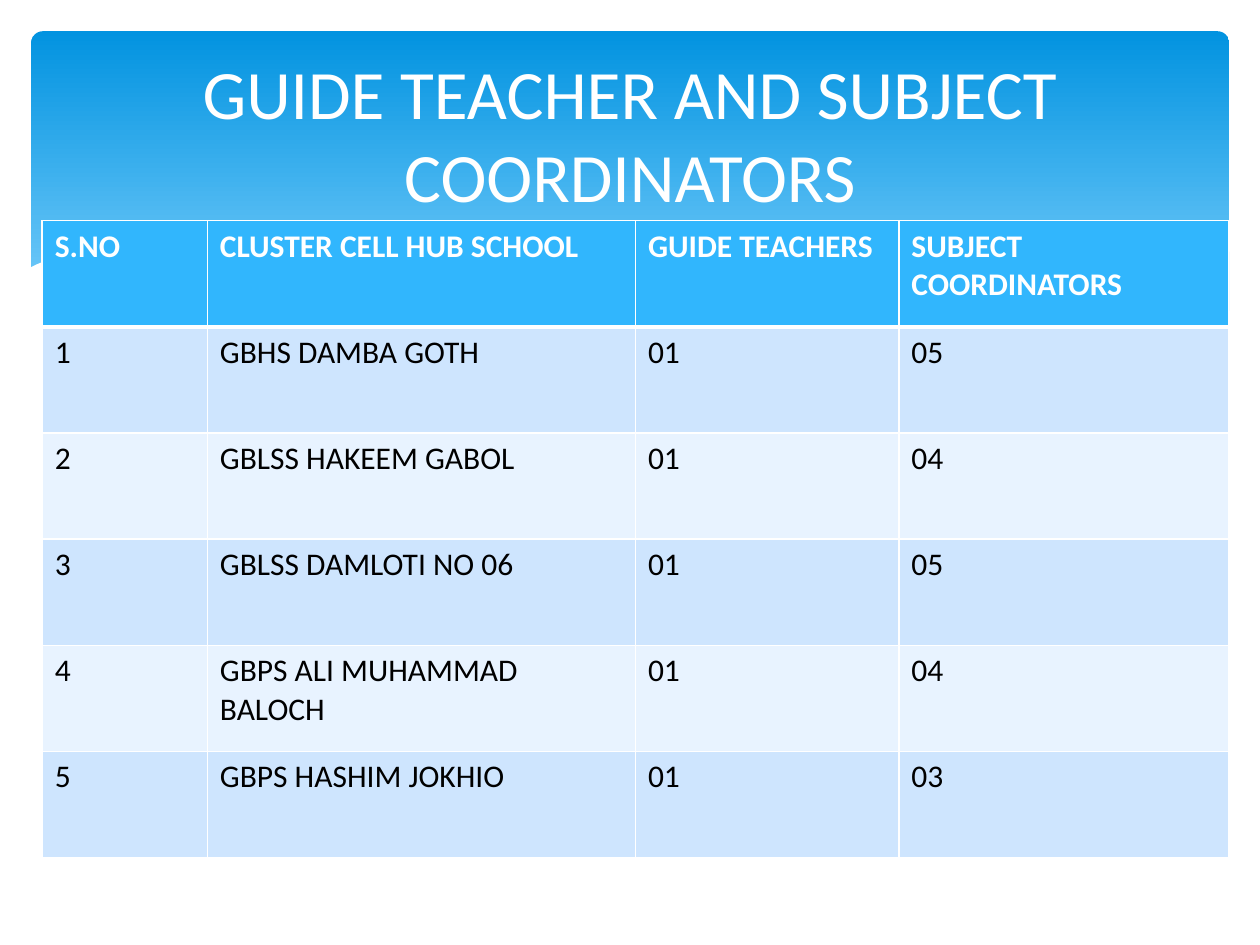
from lxml.etree import SubElement
from pptx import Presentation
from pptx.dml.color import RGBColor
from pptx.enum.shapes import MSO_SHAPE
from pptx.enum.text import MSO_ANCHOR, MSO_AUTO_SIZE, PP_ALIGN
from pptx.oxml.ns import qn
from pptx.util import Cm, Pt

WHITE = "FFFFFF"
HEADER_BLUE = "31B6FD"
ROW_BLUES = ("CEE5FE", "E8F3FF")
WAVE_BLUE = "C6E7FC"

COLUMN_WIDTHS = (3.33, 8.63, 5.31, 6.65)
ROW_HEIGHT = 2.14
HEADINGS = ("S.NO", "CLUSTER CELL HUB SCHOOL", "GUIDE TEACHERS", "SUBJECT COORDINATORS")
SCHOOLS = (
    ("GBHS DAMBA GOTH", "01", "05"),
    ("GBLSS HAKEEM GABOL", "01", "04"),
    ("GBLSS DAMLOTI NO 06", "01", "05"),
    ("GBPS ALI MUHAMMAD BALOCH", "01", "04"),
    ("GBPS HASHIM JOKHIO", "01", "03"),
)

RIGHT_WAVE = (
    (24.77, 5.08), (23.39, 5.33), (21.87, 5.66), (19.79, 6.15), (17.93, 6.53),
    (16.79, 6.73), (18.26, 6.91), (19.53, 7.01), (20.68, 7.06), (21.69, 7.01),
    (22.58, 6.91), (23.39, 6.73), (24.1, 6.53), (24.79, 6.27), (24.79, 5.08),
)
MIDDLE_WAVE = (
    (22.68, 6.93), (21.26, 6.73), (19.69, 6.45), (17.93, 6.1), (15.98, 5.64),
    (14.83, 5.36), (13.74, 5.16), (12.75, 4.98), (11.23, 4.8), (9.65, 4.7),
    (8.33, 4.75), (7.26, 4.85), (8.69, 5.05), (10.26, 5.36), (11.4, 5.64),
    (13.46, 6.1), (15.27, 6.48), (16.89, 6.76), (18.34, 6.96), (19.63, 7.04),
    (20.78, 7.06), (21.77, 7.04),
)
FALLING_CURVE = (
    (7.85, 4.95), (8.74, 4.83), (9.83, 4.75), (11.43, 4.78), (12.95, 4.88),
    (14.78, 5.08), (16.89, 5.41), (19.3, 5.92), (21.11, 6.38), (23.04, 6.91),
)
RISING_CURVE = (
    (15.57, 6.53), (17.07, 6.12), (19, 5.66), (21.23, 5.18), (22.73, 4.93),
    (24.16, 4.75), (24.77, 4.7),
)
BANNER_EDGE = (
    (24.82, 6.25), (24.13, 6.5), (23.37, 6.73), (22.53, 6.88), (21.59, 6.99),
    (20.55, 7.04), (19.33, 6.99), (17.98, 6.86), (16.46, 6.65), (14.71, 6.35),
    (12.78, 5.92), (11.35, 5.59), (9.27, 5.13), (7.42, 4.83), (5.84, 4.7),
    (4.5, 4.67), (3.35, 4.72), (2.41, 4.85), (1.7, 5), (1.17, 5.16),
    (0.74, 5.33), (0.58, 5.41), (0.58, 8.36), (24.82, 8.36),
)


def rgb(value):
    return RGBColor.from_string(value)


def write_text(frame, text, *, size, color, bold=False, align=PP_ALIGN.LEFT):
    frame.word_wrap = True
    paragraph = frame.paragraphs[0]
    paragraph.alignment = align
    run = paragraph.add_run()
    run.text = text
    run.font.name = "Calibri"
    run.font.size = Pt(size)
    run.font.bold = bold
    run.font.color.rgb = rgb(color)


def add_banner(slide):
    banner = slide.shapes.add_shape(
        MSO_SHAPE.ROUNDED_RECTANGLE, Cm(0.63), Cm(0.63), Cm(24.15), Cm(6.86))
    banner.adjustments[0] = 0.034
    banner.shadow.inherit = False
    banner.line.fill.background()
    banner.fill.gradient()
    banner.fill.gradient_angle = 270
    stops = zip(banner.fill.gradient_stops, ((0, "0293E0"), (0.9, "83D3FE")))
    for stop, (position, color) in stops:
        stop.position = position
        stop.color.rgb = rgb(color)


def draw_outline(slide, points, closed):
    start, *rest = [(Cm(x), Cm(y)) for x, y in points]
    builder = slide.shapes.build_freeform(*start)
    builder.add_line_segments(rest, close=closed)
    outline = builder.convert_to_shape()
    outline.shadow.inherit = False
    return outline


def add_wave(slide, points, color, opacity=100):
    wave = draw_outline(slide, points, True)
    wave.line.fill.background()
    wave.fill.solid()
    wave.fill.fore_color.rgb = rgb(color)
    if opacity < 100:
        tint = wave.element.spPr.find(qn("a:solidFill"))[0]
        SubElement(tint, qn("a:alpha"), val=str(opacity * 1000))


def add_curve(slide, points):
    curve = draw_outline(slide, points, False)
    curve.fill.background()
    curve.line.color.rgb = rgb(WHITE)
    curve.line.width = Pt(0.25)


def add_borders(cell, **widths):
    properties = cell._tc.get_or_add_tcPr()
    for side, width in widths.items():
        border = SubElement(properties, qn(f"a:ln{side}"), w=str(Pt(width)))
        fill = SubElement(border, qn("a:solidFill"))
        SubElement(fill, qn("a:srgbClr"), val=WHITE)


def add_school_table(slide):
    rows = [HEADINGS]
    rows += [(str(number), *school) for number, school in enumerate(SCHOOLS, 1)]
    table = slide.shapes.add_table(
        len(rows), len(HEADINGS), Cm(0.85), Cm(4.45),
        Cm(sum(COLUMN_WIDTHS)), Cm(ROW_HEIGHT * len(rows))).table
    for column, width in zip(table.columns, COLUMN_WIDTHS):
        column.width = Cm(width)
    for row_index, row in enumerate(rows):
        table.rows[row_index].height = Cm(ROW_HEIGHT)
        heading = row_index == 0
        background = HEADER_BLUE if heading else ROW_BLUES[(row_index - 1) % 2]
        for column_index, text in enumerate(row):
            cell = table.cell(row_index, column_index)
            add_borders(cell, L=1, R=1, T=3 if row_index == 1 else 1, B=3 if heading else 1)
            cell.fill.solid()
            cell.fill.fore_color.rgb = rgb(background)
            write_text(cell.text_frame, text, size=18,
                       color=WHITE if heading else "000000", bold=heading)


def set_title(slide, text):
    title = slide.shapes.title
    title.left, title.top, title.width, title.height = Cm(1.27), Cm(0.94), Cm(22.86), Cm(3.48)
    title.text_frame.auto_size = MSO_AUTO_SIZE.NONE
    title.text_frame.vertical_anchor = MSO_ANCHOR.MIDDLE
    write_text(title.text_frame, text, size=39.6, color=WHITE, align=PP_ALIGN.CENTER)
    slide.shapes.element.append(title.element)


def main():
    presentation = Presentation()
    presentation.slide_width = Cm(25.4)
    presentation.slide_height = Cm(19.05)
    slide = presentation.slides.add_slide(presentation.slide_layouts[5])
    add_banner(slide)
    add_wave(slide, RIGHT_WAVE, WAVE_BLUE, opacity=29)
    add_wave(slide, MIDDLE_WAVE, WAVE_BLUE, opacity=40)
    add_curve(slide, FALLING_CURVE)
    add_curve(slide, RISING_CURVE)
    add_wave(slide, BANNER_EDGE, WHITE)
    add_school_table(slide)
    set_title(slide, "GUIDE TEACHER AND SUBJECT COORDINATORS")
    presentation.save("out.pptx")


if __name__ == "__main__":
    main()
